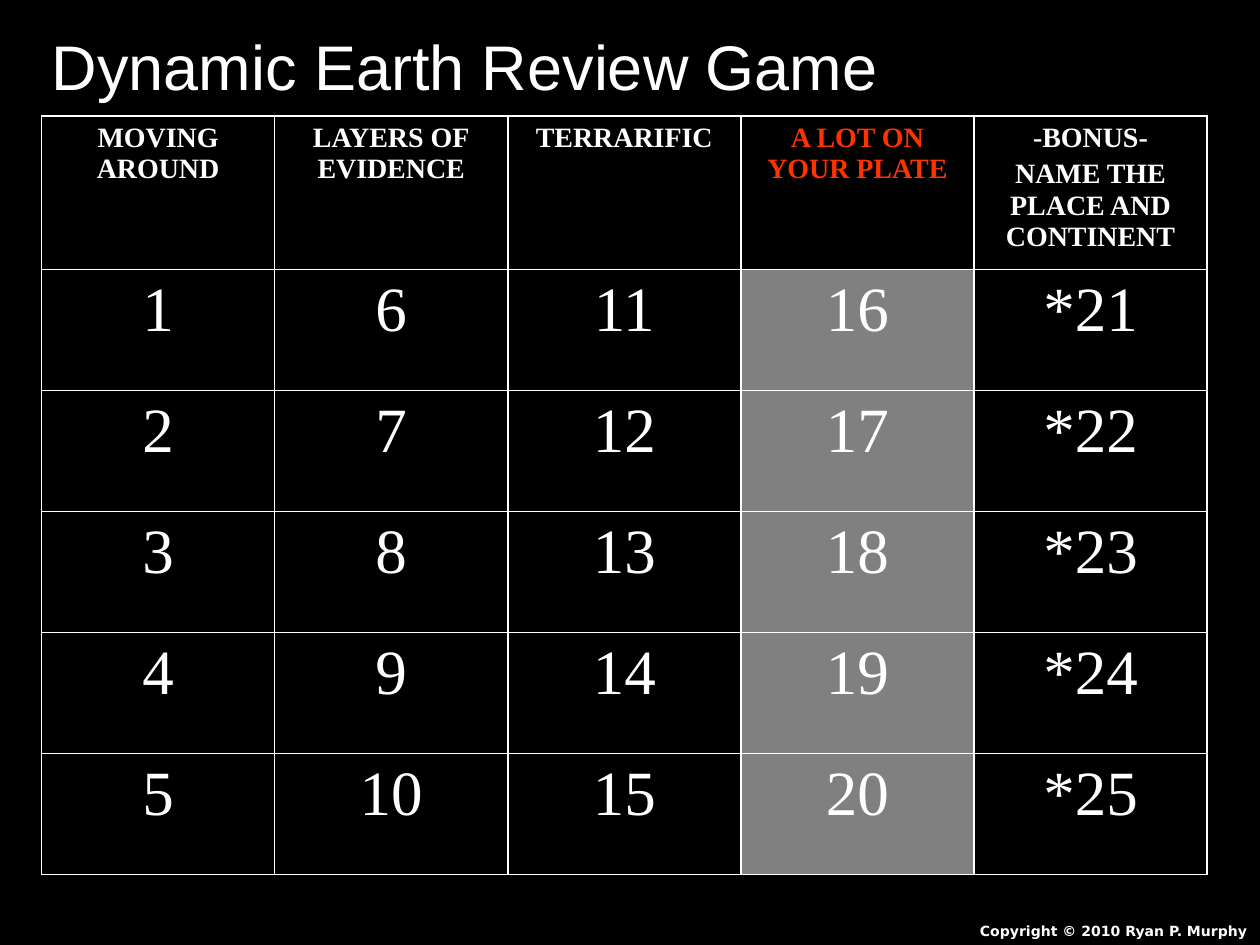
from lxml import etree
from pptx import Presentation
from pptx.dml.color import RGBColor
from pptx.enum.text import MSO_ANCHOR, PP_ALIGN
from pptx.oxml.ns import qn
from pptx.util import Inches, Pt

BLACK = RGBColor(0x00, 0x00, 0x00)
WHITE = RGBColor(0xFF, 0xFF, 0xFF)
GRAY = RGBColor(0x80, 0x80, 0x80)
RED = RGBColor(0xFF, 0x33, 0x00)

TITLE = "Dynamic Earth Review Game"
COPYRIGHT = "Copyright © 2010 Ryan P. Murphy"
CATEGORIES = [
    "MOVING AROUND",
    "LAYERS OF\vEVIDENCE",
    "TERRARIFIC",
    "A LOT ON YOUR PLATE",
    "-BONUS-\nNAME THE PLACE AND CONTINENT",
]
QUESTIONS = 5
HIGHLIGHT = 3
BONUS = 4

TABLE_LEFT, TABLE_TOP = 0.33, 0.92
COLUMN_WIDTH = 1.85
HEADER_HEIGHT, ROW_HEIGHT = 1.22, 0.96


def style_text(frame, font, size, color=WHITE, bold=False, align=PP_ALIGN.LEFT):
    for para in frame.paragraphs:
        para.alignment = align
        for span in para.runs:
            span.font.name = font
            span.font.size = Pt(size)
            span.font.bold = bold
            span.font.color.rgb = color


def add_text(page, text, left, top, width, height, **style):
    frame = page.shapes.add_textbox(
        Inches(left), Inches(top), Inches(width), Inches(height)).text_frame
    frame.word_wrap = True
    frame.text = text
    style_text(frame, **style)
    return frame


def add_borders(cell):
    properties = cell._tc.get_or_add_tcPr()
    for side in ("a:lnL", "a:lnR", "a:lnT", "a:lnB"):
        line = etree.SubElement(properties, qn(side), w=str(Pt(1)))
        fill = etree.SubElement(line, qn("a:solidFill"))
        etree.SubElement(fill, qn("a:srgbClr"), val=str(WHITE))


def fill_cell(cell, text, size, color, bold, background):
    cell.text_frame.text = text
    cell.vertical_anchor = MSO_ANCHOR.TOP
    style_text(cell.text_frame, "Times New Roman", size, color, bold, PP_ALIGN.CENTER)
    for para in cell.text_frame.paragraphs:
        para.space_before = Pt(size * 0.2)
    add_borders(cell)
    cell.fill.solid()
    cell.fill.fore_color.rgb = background


def add_board(page):
    columns = len(CATEGORIES)
    board = page.shapes.add_table(
        QUESTIONS + 1, columns, Inches(TABLE_LEFT), Inches(TABLE_TOP),
        Inches(columns * COLUMN_WIDTH),
        Inches(HEADER_HEIGHT + QUESTIONS * ROW_HEIGHT)).table
    board.first_row = board.horz_banding = False
    for index, row in enumerate(board.rows):
        row.height = Inches(ROW_HEIGHT if index else HEADER_HEIGHT)
    for column, category in enumerate(CATEGORIES):
        board.columns[column].width = Inches(COLUMN_WIDTH)
        special = column == HIGHLIGHT
        fill_cell(board.cell(0, column), category, 16,
                  RED if special else WHITE, True, BLACK)
        for row in range(1, QUESTIONS + 1):
            number = column * QUESTIONS + row
            label = f"*{number}" if column == BONUS else str(number)
            fill_cell(board.cell(row, column), label, 36, WHITE, False,
                      GRAY if special else BLACK)


def main():
    deck = Presentation()
    deck.slide_width, deck.slide_height = Inches(10), Inches(7.5)
    page = deck.slides.add_slide(deck.slide_layouts[6])
    page.background.fill.solid()
    page.background.fill.fore_color.rgb = BLACK

    add_board(page)
    add_text(page, COPYRIGHT, 7.08, 7.27, 2.92, 0.23,
             font="DejaVu Sans", size=8, bold=True, align=PP_ALIGN.RIGHT)
    title = add_text(page, TITLE, 0.17, 0.17, 8.83, 0.7, font="Arial", size=36)
    title.margin_left = Inches(0.24)
    deck.save("out.pptx")


if __name__ == "__main__":
    main()
